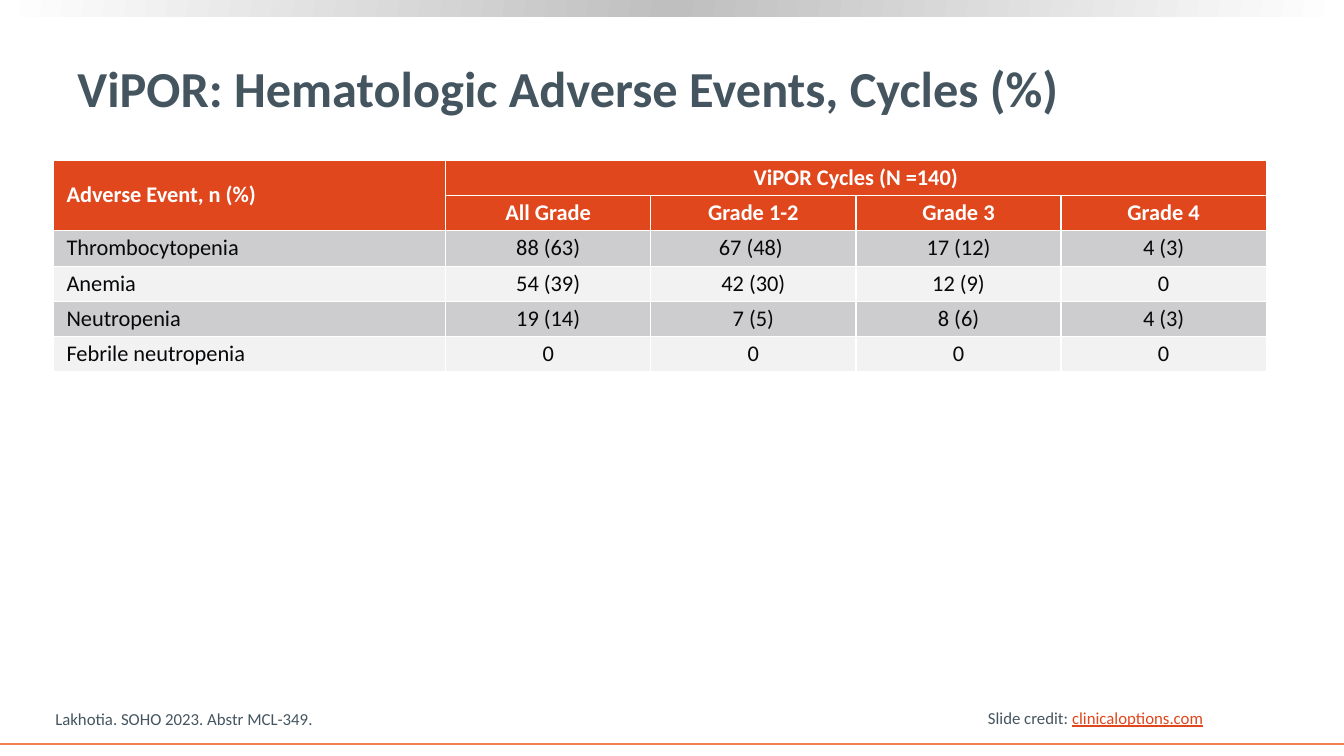
from copy import deepcopy

from pptx import Presentation
from pptx.dml.color import RGBColor
from pptx.enum.shapes import MSO_CONNECTOR, MSO_SHAPE
from pptx.enum.text import MSO_ANCHOR, PP_ALIGN
from pptx.oxml.ns import qn
from pptx.util import Inches, Pt

FONT = "Calibri"
SLATE, ORANGE, CORAL = "455560", "E1471D", "F47D55"
WHITE, BLACK, SILVER = "FFFFFF", "07080A", "BFBFBF"
BANDS = ["CDCDCF", "F2F2F2"]

GRADES = ["All Grade", "Grade 1-2", "Grade 3", "Grade 4"]
EVENTS = [
    ["Thrombocytopenia", "88 (63)", "67 (48) ", "17 (12)", "4 (3)"],
    ["Anemia", "54 (39)", "42 (30)", "12 (9)", "0"],
    ["Neutropenia", "19 (14)", "7 (5)", "8 (6)", "4 (3)"],
    ["Febrile neutropenia", "0", "0", "0", "0"],
]


def rgb(value):
    return RGBColor.from_string(value)


def set_font(font, size, color, bold=False):
    font.name = FONT
    font.size = Pt(size)
    font.bold = bold
    font.color.rgb = rgb(color)


def add_gradient_bar(s, x, y, w, h, colors):
    """Draw a bar whose colours are spread evenly along a gradient."""
    sp = s.shapes.add_shape(MSO_SHAPE.RECTANGLE, Inches(x), Inches(y), Inches(w), Inches(h))
    sp.shadow.inherit = False
    sp.line.fill.background()
    sp.fill.gradient()
    sp.fill.gradient_angle = 170
    stops = sp._element.spPr.find(".//" + qn("a:gsLst"))
    while len(stops) < len(colors):
        stops.append(deepcopy(stops[0]))
    for i, (stop, color) in enumerate(zip(sp.fill.gradient_stops, colors)):
        stop.position = i / (len(colors) - 1)
        stop.color.rgb = rgb(color)


def add_rule(s, x1, x2, y, color, width):
    line = s.shapes.add_connector(
        MSO_CONNECTOR.STRAIGHT, Inches(x1), Inches(y), Inches(x2), Inches(y))
    line.line.color.rgb = rgb(color)
    line.line.width = Pt(width)
    spPr = line._element.spPr
    spPr.append(spPr.makeelement(qn("a:effectLst")))


def add_text(s, text, x, y, w, h, size, bold=False, anchor=MSO_ANCHOR.TOP, wrap=True):
    """Add a one-paragraph text box and return its paragraph."""
    tf = s.shapes.add_textbox(Inches(x), Inches(y), Inches(w), Inches(h)).text_frame
    tf.word_wrap = wrap
    tf.vertical_anchor = anchor
    p = tf.paragraphs[0]
    p.add_run().text = text
    set_font(p.font, size, SLATE, bold)
    return p


def fill_cell(cell, text, fill, color, bold, align):
    cell.fill.solid()
    cell.fill.fore_color.rgb = rgb(fill)
    cell.margin_left = cell.margin_right = Inches(0.13)
    cell.margin_top = cell.margin_bottom = Inches(0.05)
    cell.vertical_anchor = MSO_ANCHOR.MIDDLE
    p = cell.text_frame.paragraphs[0]
    p.text = text
    p.alignment = align
    p.line_spacing = 0.9
    set_font(p.font, 16, color, bold)


def add_events_table(s, x, y, w, label_w, row_h):
    header = [["Adverse Event, n (%)", "ViPOR Cycles (N =140)", "", "", ""], ["", *GRADES]]
    rows = header + EVENTS
    n_cols = len(rows[0])
    table = s.shapes.add_table(
        len(rows), n_cols, Inches(x), Inches(y), Inches(w), Inches(row_h * len(rows))).table
    for i, col in enumerate(table.columns):
        col.width = Inches(label_w if i == 0 else (w - label_w) / (n_cols - 1))
    for r, row in enumerate(rows):
        table.rows[r].height = Inches(row_h)
        is_header = r < len(header)
        fill = ORANGE if is_header else BANDS[r % 2]
        color = WHITE if is_header else BLACK
        for c, text in enumerate(row):
            align = PP_ALIGN.CENTER if c else PP_ALIGN.LEFT
            fill_cell(table.cell(r, c), text, fill, color, is_header, align)
    table.cell(0, 0).merge(table.cell(1, 0))
    table.cell(0, 1).merge(table.cell(0, n_cols - 1))


def main():
    prs = Presentation()
    prs.slide_width, prs.slide_height = Inches(13.33), Inches(7.5)
    s = prs.slides.add_slide(prs.slide_layouts[6])

    add_gradient_bar(s, 0, 0, 13.33, 0.16, [WHITE, SILVER, WHITE])
    add_rule(s, 0, 13.33, 7.38, CORAL, 1.5)

    credit = add_text(s, "Slide credit: ", 9.7, 6.97, 2.36, 0.3, 12, wrap=False)
    site = credit.add_run()
    site.text = "clinicaloptions.com"
    site.font.color.rgb = rgb(ORANGE)
    site.font.underline = True

    add_text(s, "ViPOR: Hematologic Adverse Events, Cycles (%)", 0.67, 0.26, 11.89, 1.21,
             36, bold=True, anchor=MSO_ANCHOR.MIDDLE)
    add_events_table(s, 0.53, 1.59, 12.03, 3.89, 0.35)
    add_text(s, "Lakhotia. SOHO 2023. Abstr MCL-349.", 0.45, 6.98, 8.76, 0.3,
             12, anchor=MSO_ANCHOR.BOTTOM)

    prs.save("out.pptx")


if __name__ == "__main__":
    main()
